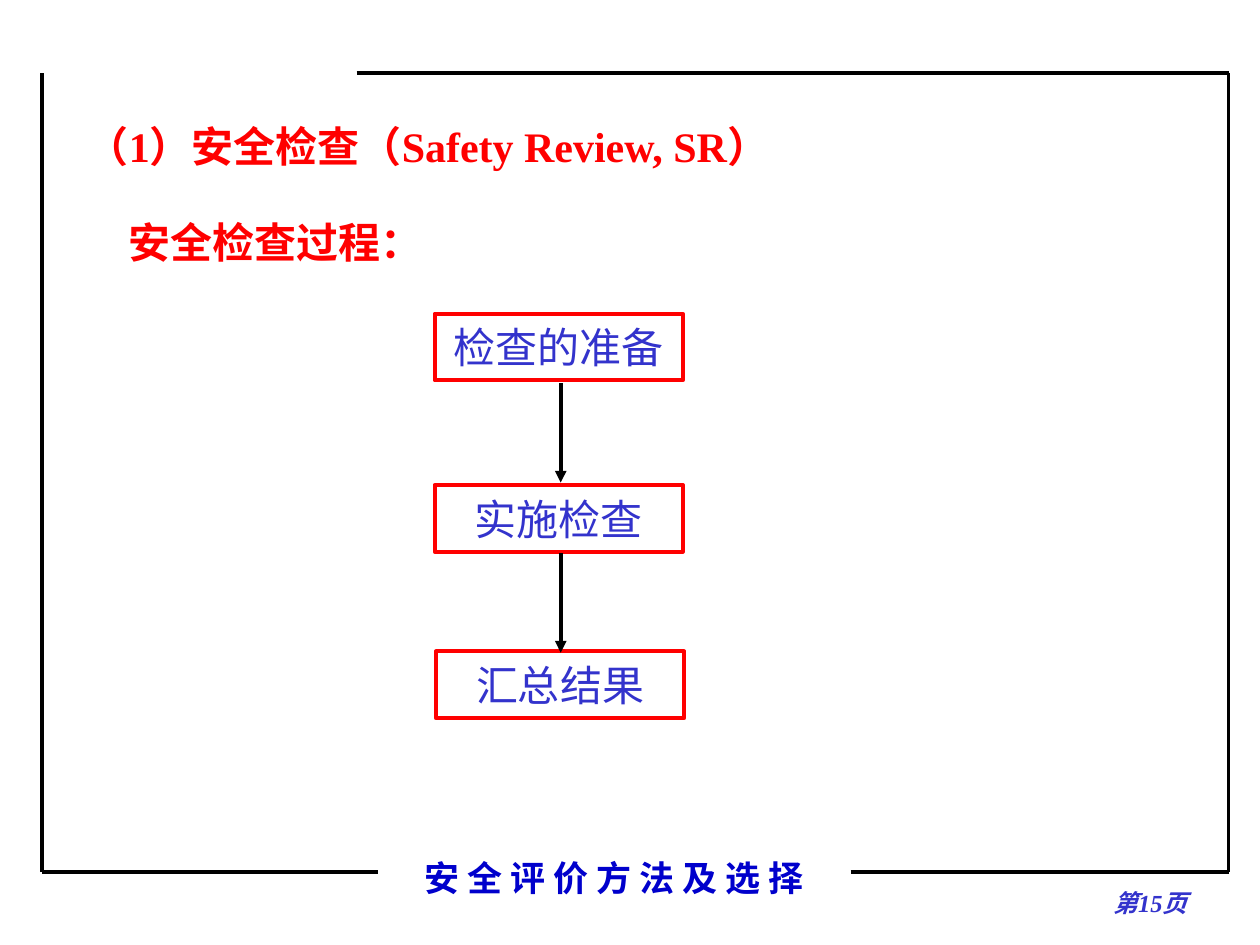
"""Build the safety review process slide."""
from lxml import etree
from pptx import Presentation
from pptx.dml.color import RGBColor
from pptx.enum.shapes import MSO_CONNECTOR as CONN, MSO_SHAPE as SHAPE
from pptx.enum.text import MSO_ANCHOR as ANCHOR, PP_ALIGN as ALIGN
from pptx.oxml.ns import qn
from pptx.util import Inches, Pt

FONT = "Times New Roman"
BLACK, RED, BLUE, NAVY = "000000", "FF0000", "3333CC", "0000CC"
LEFT, RIGHT, TOP, BOTTOM = 0.33, 9.75, 0.58, 6.92
FRAME = [
    (LEFT, TOP, LEFT, BOTTOM),
    (RIGHT, TOP, RIGHT, BOTTOM),
    (LEFT, BOTTOM, 3, BOTTOM),
    (6.75, BOTTOM, RIGHT, BOTTOM),
    (2.83, TOP, 9.17, TOP),
    (9.17, TOP, RIGHT, TOP),
]
TITLE = ["（1）安全检查（Safety Review, SR）", "安全检查过程："]
FOOTER = "安 全 评 价 方 法 及 选 择"
PAGE = "第15页"
STEPS = [("检查的准备", 3.45, 2.49), ("实施检查", 3.45, 3.85), ("汇总结果", 3.46, 5.17)]
STEP_W, STEP_H = 1.97, 0.53
ARROW_X, ARROW_LEN = 4.45, 0.79
ARROW_TOPS = [3.04, 4.39]


def rgb(color):
    return RGBColor.from_string(color)


def write(shape, lines, size, color, bold=False, italic=False, align=ALIGN.CENTER):
    tf = shape.text_frame
    tf.word_wrap = True
    tf.vertical_anchor = ANCHOR.MIDDLE
    tf.text = "\n".join(lines)
    for p in tf.paragraphs:
        p.alignment = align
        for r in p.runs:
            r.font.name, r.font.size = FONT, Pt(size)
            r.font.bold, r.font.italic = bold, italic
            r.font.color.rgb = rgb(color)
    return tf


def add_text(s, at, lines, size, color, **style):
    return write(s.shapes.add_textbox(*map(Inches, at)), lines, size, color, **style)


def add_line(s, ends, arrow=False):
    line = s.shapes.add_connector(CONN.STRAIGHT, *map(Inches, ends))
    line.line.color.rgb = rgb(BLACK)
    line.line.width = Pt(2.25)
    if arrow:
        etree.SubElement(line.line._get_or_add_ln(), qn("a:tailEnd"), type="triangle")
    etree.SubElement(line._element.spPr, qn("a:effectLst"))


def add_step(s, text, x, y):
    sp = s.shapes.add_shape(SHAPE.RECTANGLE, *map(Inches, (x, y, STEP_W, STEP_H)))
    sp.shadow.inherit = False
    sp.fill.background()
    sp.line.color.rgb = rgb(RED)
    sp.line.width = Pt(2.25)
    write(sp, [text], 24, BLUE)


def main():
    prs = Presentation()
    prs.slide_width, prs.slide_height = Inches(10), Inches(7.5)
    s = prs.slides.add_slide(prs.slide_layouts[6])
    for ends in FRAME:
        add_line(s, ends)
    add_text(s, (3, 6.75, 3.75, 0.43), [FOOTER], 20, NAVY, bold=True)
    add_text(s, (8.67, 7, 0.92, 0.33), [PAGE], 14, BLUE, bold=True, italic=True)
    tf = add_text(s, (0.59, 0.99, 8.11, 1.1), TITLE, 24, RED, bold=True, align=ALIGN.LEFT)
    p = tf.paragraphs[1]
    p.space_before = Pt(26)
    p._p.get_or_add_pPr().set("marL", str(Inches(0.33)))
    for step in STEPS:
        add_step(s, *step)
    for y in ARROW_TOPS:
        add_line(s, (ARROW_X, y, ARROW_X, y + ARROW_LEN), arrow=True)
    prs.save("out.pptx")


if __name__ == "__main__":
    main()
